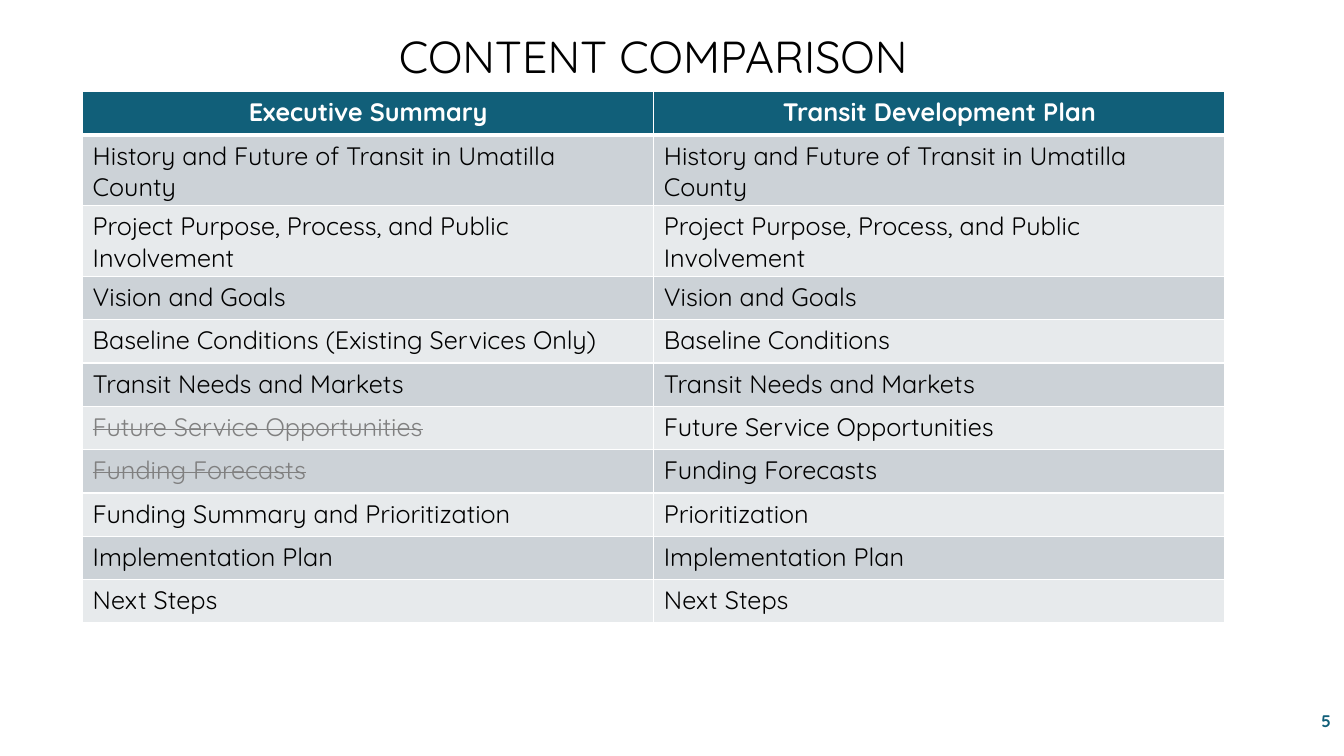
from lxml.etree import SubElement
from pptx import Presentation
from pptx.dml.color import RGBColor
from pptx.enum.text import MSO_ANCHOR as Anchor, MSO_AUTO_SIZE as AutoSize, PP_ALIGN as Align
from pptx.oxml.ns import qn
from pptx.util import Inches, Pt

COLORS = {
    "teal": "115F79",
    "white": "FFFFFF",
    "black": "000000",
    "muted": "808080",
    "dark band": "CCD2D7",
    "light band": "E7EAEC",
}
HEADINGS = ("Executive Summary", "Transit Development Plan")
HISTORY = "History and Future of Transit in Umatilla County"
PURPOSE = "Project Purpose, Process, and Public Involvement"
CONTENTS = [
    (HISTORY, HISTORY),
    (PURPOSE, PURPOSE),
    ("Vision and Goals", "Vision and Goals"),
    ("Baseline Conditions (Existing Services Only)", "Baseline Conditions"),
    ("Transit Needs and Markets", "Transit Needs and Markets"),
    ("Future Service Opportunities", "Future Service Opportunities"),
    ("Funding Forecasts", "Funding Forecasts"),
    ("Funding Summary and Prioritization", "Prioritization"),
    ("Implementation Plan", "Implementation Plan"),
    ("Next Steps", "Next Steps"),
]
DROPPED_FROM_SUMMARY = {"Future Service Opportunities", "Funding Forecasts"}


class ComparisonPage:
    """Holds the style and the slide; places are percentages of the slide's size."""

    font = "Quicksand"

    def __init__(self, deck):
        self.deck = deck
        self.page = deck.slides.add_slide(deck.slide_layouts[5])

    def place(self, left, top, width, height):
        """Turn percentages into lengths."""
        across, down = self.deck.slide_width / 100, self.deck.slide_height / 100
        return [round(length) for length in
                (left * across, top * down, width * across, height * down)]

    def style(self, frame, size, color, bold=False, align=Align.LEFT):
        paragraph = frame.paragraphs[0]
        paragraph.alignment = align
        span = paragraph.runs[0]
        span.font.name = self.font
        span.font.size = Pt(size)
        span.font.bold = bold
        span.font.color.rgb = RGBColor.from_string(COLORS[color])
        return span

    def title(self, text, *area):
        box = self.page.shapes.title
        box.left, box.top, box.width, box.height = self.place(*area)
        frame = box.text_frame
        frame.text = text
        frame.auto_size = AutoSize.NONE
        frame.vertical_anchor = Anchor.TOP
        self.style(frame, 32, "black", align=Align.CENTER)
        frame.paragraphs[0].line_spacing = 0.9
        frame.paragraphs[0].space_before = Pt(12)

    def page_number(self, text, *area):
        frame = self.page.shapes.add_textbox(*self.place(*area)).text_frame
        frame.word_wrap = True
        frame.vertical_anchor = Anchor.MIDDLE
        frame.text = text
        self.style(frame, 12, "teal", bold=True, align=Align.RIGHT)

    def borders(self, cell, bottom):
        """Draw white cell edges, 1 point wide except for the bottom one."""
        properties = cell._tc.get_or_add_tcPr()
        edges = (("lnL", 1), ("lnR", 1), ("lnT", 1), ("lnB", bottom))
        for position, (edge, width) in enumerate(edges):
            line = SubElement(properties, qn(f"a:{edge}"), w=str(Pt(width)))
            fill = SubElement(line, qn("a:solidFill"))
            SubElement(fill, qn("a:srgbClr"), val=COLORS["white"])
            properties.insert(position, line)

    def cell(self, cell, text, band, color, bold=False, align=Align.LEFT, bottom=1):
        cell.text_frame.text = text
        cell.fill.solid()
        cell.fill.fore_color.rgb = RGBColor.from_string(COLORS[band])
        self.borders(cell, bottom)
        return self.style(cell.text_frame, 18, color, bold, align)

    def table(self, headings, contents, *area):
        rows = len(contents) + 1
        table = self.page.shapes.add_table(rows, len(headings), *self.place(*area)).table
        for row in table.rows:
            row.height = Inches(0.43)
        for column, heading in enumerate(headings):
            self.cell(table.cell(0, column), heading, "teal", "white",
                      bold=True, align=Align.CENTER, bottom=3)
        for row, topics in enumerate(contents, start=1):
            band = "dark band" if row % 2 else "light band"
            for column, topic in enumerate(topics):
                dropped = column == 0 and topic in DROPPED_FROM_SUMMARY
                span = self.cell(table.cell(row, column), topic, band,
                                 "muted" if dropped else "black")
                if dropped:
                    span.font._element.set("strike", "sngStrike")


def main():
    deck = Presentation()
    deck.slide_width, deck.slide_height = Inches(13.33), Inches(7.5)
    page = ComparisonPage(deck)
    page.page_number("5", 87.25, 92.67, 12.53, 5.33)
    page.table(HEADINGS, CONTENTS, 6.15, 12.13, 85, 70.53)
    page.title("CONTENT COMPARISON", 22.96, 3.87, 51.31, 5.87)
    deck.save("out.pptx")


if __name__ == "__main__":
    main()
